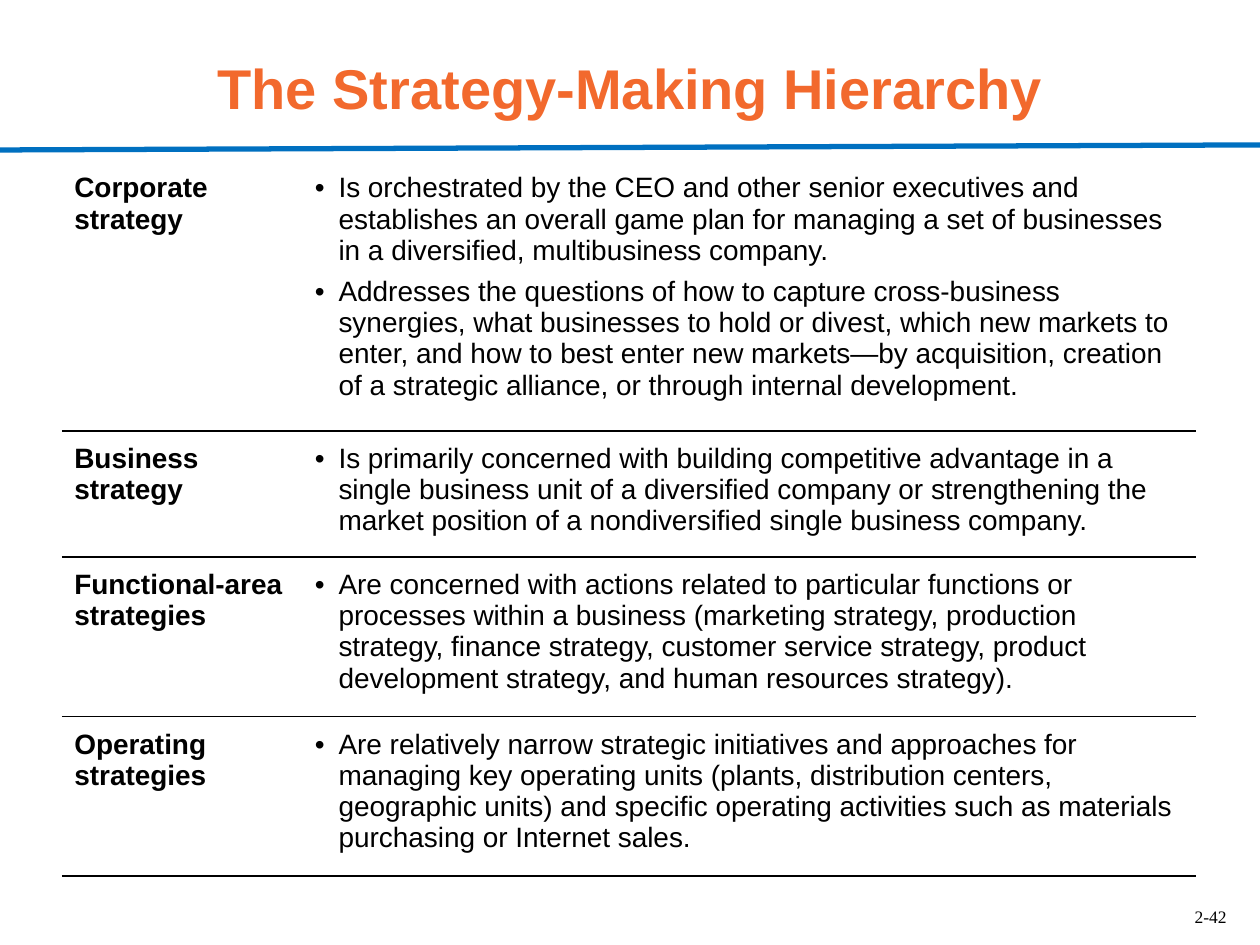
from lxml import etree
from pptx import Presentation
from pptx.dml.color import RGBColor
from pptx.enum import shapes, text
from pptx.oxml.ns import qn
from pptx.util import Pt

BLACK, BLUE, ORANGE = "000000", "0070C0", "F2692D"
LEFT, MID, RIGHT = text.PP_ALIGN.LEFT, text.PP_ALIGN.CENTER, text.PP_ALIGN.RIGHT
ROWS = [
    ("Corporate strategy", 145, [
        "Is orchestrated by the CEO and other senior executives and establishes an overall game plan for managing a set of businesses in a diversified, multibusiness company.",
        "Addresses the questions of how to capture cross-business synergies, what businesses to hold or divest, which new markets to enter, and how to best enter new markets—by acquisition, creation of a strategic alliance, or through internal development."]),
    ("Business strategy", 67.5, [
        "Is primarily concerned with building competitive advantage in a single business unit of a diversified company or strengthening the market position of a nondiversified single business company."]),
    ("Functional-area strategies", 85.5, [
        "Are concerned with actions related to particular functions or processes within a business (marketing strategy, production strategy, finance strategy, customer service strategy, product development strategy, and human resources strategy)."]),
    ("Operating strategies", 85.5, [
        "Are relatively narrow strategic initiatives and approaches for managing key operating units (plants, distribution centers, geographic units) and specific operating activities such as materials purchasing or Internet sales."]),
]


def color(code):
    return RGBColor.from_string(code)


def write(para, words, size=16, font="Arial", ink=BLACK, bold=False, align=LEFT):
    para.alignment = align
    run = para.add_run()
    run.text = words
    run.font.size = Pt(size)
    run.font.name = font
    run.font.bold = bold
    run.font.color.rgb = color(ink)


def label(slide, words, box, anchor, **style):
    frame = slide.shapes.add_textbox(*map(Pt, box)).text_frame
    frame.word_wrap = True
    frame.vertical_anchor = anchor
    write(frame.paragraphs[0], words, **style)


def rule(slide, start, end, ink, width):
    line = slide.shapes.add_connector(
        shapes.MSO_CONNECTOR.STRAIGHT, *map(Pt, start + end))
    line.line.color.rgb = color(ink)
    line.line.width = Pt(width)
    etree.SubElement(line._element.spPr, qn("a:effectLst"))


def bullet(para):
    para.space_before = Pt(6)
    props = para._p.get_or_add_pPr()
    props.set("marL", str(Pt(13.5)))
    props.set("indent", str(Pt(-13.5)))
    etree.SubElement(props, qn("a:buFont"), typeface="Arial")
    etree.SubElement(props, qn("a:buChar"), char="•")


def border(cell, ink, width):
    props = cell._tc.get_or_add_tcPr()
    edge = etree.Element(qn("a:lnB"), w=str(Pt(width)))
    fill = etree.SubElement(edge, qn("a:solidFill"))
    etree.SubElement(fill, qn("a:srgbClr"), val=ink)
    props.insert(0, edge)


def fill(cell, items, bold=False, dots=False):
    cell.fill.background()
    cell.margin_left = cell.margin_right = Pt(7.2)
    cell.margin_top = cell.margin_bottom = Pt(7.2)
    border(cell, BLACK, 1)
    frame = cell.text_frame
    for i, words in enumerate(items):
        para = frame.add_paragraph() if i else frame.paragraphs[0]
        write(para, words, bold=bold)
        if dots:
            bullet(para)


def grid(slide, left, top, widths):
    high = sum(row[1] for row in ROWS)
    shape = slide.shapes.add_table(
        len(ROWS), len(widths), *map(Pt, (left, top, sum(widths), high)))
    table = shape.table
    table.first_row = table.horz_banding = False
    style = table._tbl.tblPr.find(qn("a:tableStyleId"))
    style.text = "{2D5ABB26-0587-4C30-8999-92F81FD0307C}"
    for col, width in zip(table.columns, widths):
        col.width = Pt(width)
    for i, (name, height, points) in enumerate(ROWS):
        table.rows[i].height = Pt(height)
        fill(table.cell(i, 0), [name], bold=True)
        fill(table.cell(i, 1), points, dots=True)


def main():
    deck = Presentation()
    deck.slide_width, deck.slide_height = Pt(720), Pt(540)
    slide = deck.slides.add_slide(deck.slide_layouts[6])
    rule(slide, (0, 85.7), (720, 82.8), BLUE, 3)
    label(slide, "2-42", (535, 506, 173, 27.5), text.MSO_ANCHOR.BOTTOM,
          size=10, font="Times New Roman", align=RIGHT)
    label(slide, "The Strategy-Making Hierarchy", (42.5, 27, 635.5, 45),
          text.MSO_ANCHOR.MIDDLE, size=32, ink=ORANGE, bold=True, align=MID)
    grid(slide, 35.3, 91.5, (137.5, 510.5))
    deck.save("out.pptx")


if __name__ == "__main__":
    main()
